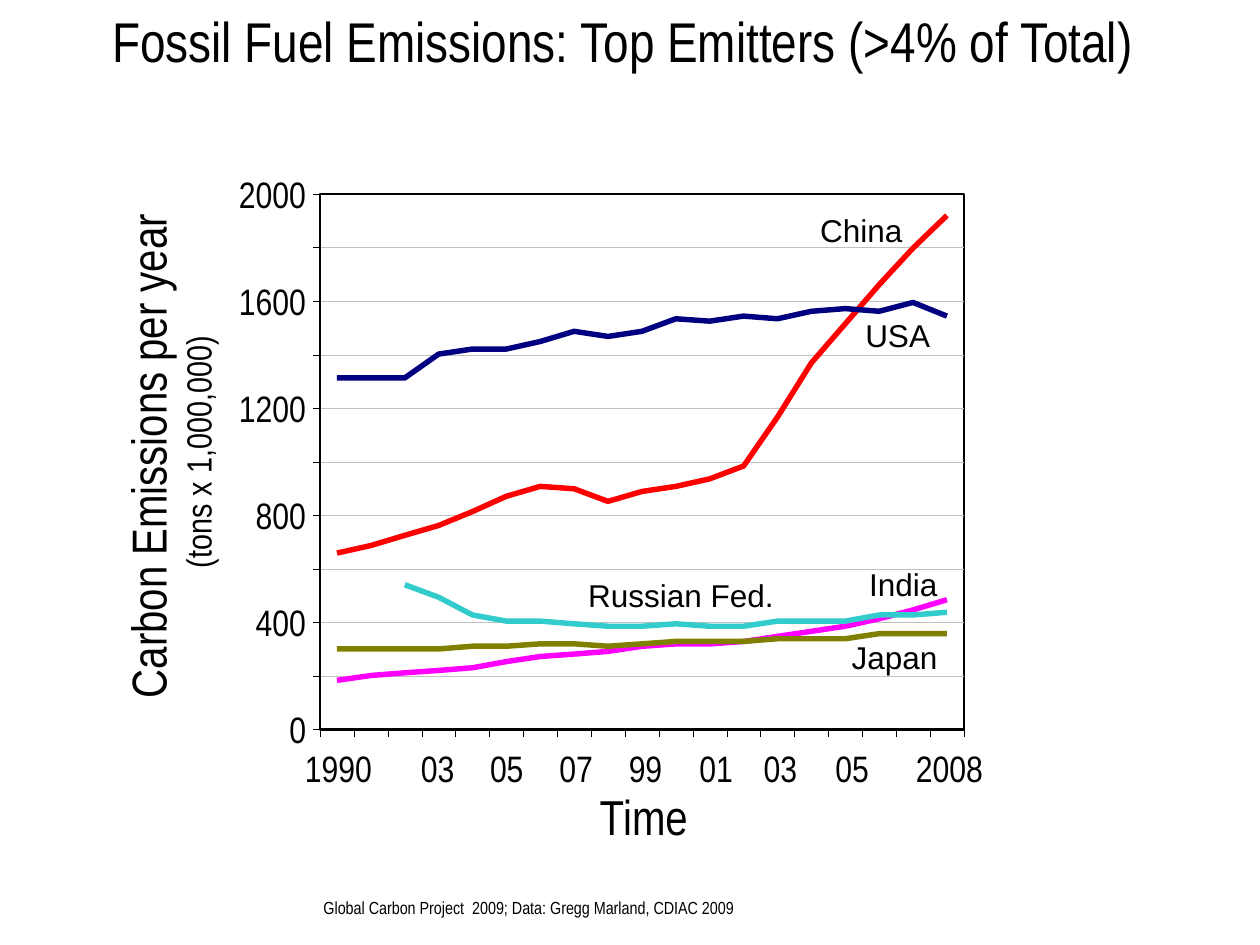
import pptx
import pptx.util
import pptx.dml.color
import pptx.enum.shapes
import pptx.enum.text
import pptx.oxml

Pt = pptx.util.Pt
ALIGN = pptx.enum.text.PP_ALIGN

COLORS = {"text": "000000", "axis": "000000", "grid": "C0C0C0", "China": "FF0000",
          "India": "FF00FF", "Russian Fed.": "33CCCC", "USA": "000080", "Japan": "808000"}

# Plot area in points, and its scales
LEFT, TOP, WIDTH, HEIGHT = 182.9, 110.9, 367.9, 306
RIGHT, BOTTOM = LEFT + WIDTH, TOP + HEIGHT
MAXIMUM, GRID_STEP, LABEL_STEP = 2000, 200, 400
FIRST_YEAR, YEARS = 1990, 19
YEAR_WIDTH = WIDTH / YEARS
TICK = 4.3
HAIRLINE = 0.1

# First year and yearly emissions of each country
EMISSIONS = {
    "China": (1990, [659, 687, 725, 762, 814, 871, 908, 899, 852, 889, 908, 936, 984,
                     1167, 1369, 1515, 1661, 1798, 1920]),
    "India": (1990, [184, 202, 212, 221, 231, 254, 273, 282, 292, 311, 320, 320, 329,
                     348, 367, 386, 414, 447, 485]),
    "Russian Fed.": (1992, [541, 494, 428, 405, 405, 395, 386, 386, 395, 386, 386,
                            405, 405, 405, 428, 428, 438]),
    "USA": (1990, [1313, 1313, 1313, 1402, 1421, 1421, 1449, 1487, 1468, 1487, 1534,
                   1525, 1544, 1534, 1562, 1572, 1562, 1595, 1544]),
    "Japan": (1990, [301, 301, 301, 301, 311, 311, 320, 320, 311, 320, 329, 329, 329,
                     339, 339, 339, 358, 358, 358]),
}
# Left, top, width of each country name
COUNTRY_LABELS = {"China": (461.5, 117, 62), "USA": (487.4, 177.1, 53),
                  "Japan": (479.5, 361, 64.5), "Russian Fed.": (329, 325.4, 123),
                  "India": (489.6, 319.3, 54.5)}
YEAR_LABELS = [("1990", 174.2), ("03", 240.5), ("05", 280), ("07", 319.7), ("99", 359.3),
               ("01", 399.6), ("03", 436.3), ("05", 477.4), ("2008", 523.4)]
DIGIT_WIDTH = 9.6


def rgb(name):
    return pptx.dml.color.RGBColor.from_string(COLORS[name])


def value_y(value):
    return BOTTOM - value / MAXIMUM * HEIGHT


def add_line(slide, start, end, color):
    line = slide.shapes.add_connector(pptx.enum.shapes.MSO_CONNECTOR.STRAIGHT,
                                      *(Pt(length) for length in (*start, *end)))
    line.line.color.rgb = rgb(color)
    line.line.width = Pt(HAIRLINE)
    properties = line._element.spPr
    properties.append(pptx.oxml.parse_xml(
        '<a:effectLst xmlns:a="http://schemas.openxmlformats.org/drawingml/2006/main"/>'))
    return line


def add_text(slide, box, paragraphs, font="Arial Narrow", align=ALIGN.LEFT,
             wrap=False, inset=True, grow=True):
    """Add a text box; paragraphs is a list of (text, size)."""
    shape = slide.shapes.add_textbox(*(Pt(length) for length in box))
    frame = shape.text_frame
    frame.word_wrap = wrap
    sizing = pptx.enum.text.MSO_AUTO_SIZE
    frame.auto_size = sizing.SHAPE_TO_FIT_TEXT if grow else sizing.NONE
    if not inset:
        frame.margin_left = frame.margin_top = frame.margin_right = frame.margin_bottom = 0
    for index, (text, size) in enumerate(paragraphs):
        paragraph = frame.add_paragraph() if index else frame.paragraphs[0]
        paragraph.alignment = align
        run = paragraph.add_run()
        run.text = text
        run.font.size = Pt(size)
        run.font.name = font
        run.font.color.rgb = rgb("text")
    return shape


def add_axis_label(slide, text, left, top):
    add_text(slide, (left, top, DIGIT_WIDTH * len(text), 25.2), [(text, 21)], inset=False)


def add_plot_area(slide):
    frame = slide.shapes.add_shape(pptx.enum.shapes.MSO_SHAPE.RECTANGLE,
                                   Pt(LEFT), Pt(TOP), Pt(WIDTH), Pt(HEIGHT))
    frame.shadow.inherit = False
    frame.fill.background()
    frame.line.color.rgb = rgb("axis")
    frame.line.width = Pt(1.38)

    # Gridlines and value ticks
    for value in range(0, MAXIMUM + 1, GRID_STEP):
        y = value_y(value)
        edge = value in (0, MAXIMUM)
        gridline = add_line(slide, (LEFT, y), (RIGHT, y), "axis" if edge else "grid")
        tick = add_line(slide, (LEFT - TICK, y), (LEFT, y), "axis")
        if value == MAXIMUM / 2:
            gridline.begin_connect(frame, 1)
            gridline.end_connect(frame, 3)
            tick.end_connect(frame, 1)

    # Value axis and year ticks
    add_line(slide, (LEFT, TOP), (LEFT, BOTTOM), "axis")
    for index in range(YEARS + 1):
        x = LEFT + index * YEAR_WIDTH
        add_line(slide, (x, BOTTOM + TICK), (x, BOTTOM), "axis")


def add_curve(slide, country, first_year, values):
    points = [(Pt(LEFT + (first_year - FIRST_YEAR + index + 0.5) * YEAR_WIDTH),
               Pt(value_y(value))) for index, value in enumerate(values)]
    builder = slide.shapes.build_freeform(*points[0])
    builder.add_line_segments(points[1:], close=False)
    curve = builder.convert_to_shape()
    curve.shadow.inherit = False
    curve.fill.background()
    curve.line.color.rgb = rgb(country)
    curve.line.width = Pt(3.13)


def main():
    presentation = pptx.Presentation()
    presentation.slide_width, presentation.slide_height = Pt(720), Pt(540)
    slide = presentation.slides.add_slide(presentation.slide_layouts[6])

    # Plot
    add_plot_area(slide)
    for country, (first_year, values) in EMISSIONS.items():
        add_curve(slide, country, first_year, values)

    # Axis labels and titles
    for text, left in YEAR_LABELS:
        add_axis_label(slide, text, left, 426)
    for value in range(0, MAXIMUM + 1, LABEL_STEP):
        text = str(value)
        add_axis_label(slide, text, 174.9 - DIGIT_WIDTH * len(text), value_y(value) - 13)
    add_text(slide, (335.5, 445.7, 65.5, 41), [("Time", 28)])
    value_title = add_text(slide, (-49.7, 228.2, 291.6, 64.8),
                           [("Carbon Emissions per year", 28), (" (tons x 1,000,000)", 20)],
                           align=ALIGN.CENTER)
    value_title.rotation = 270

    # Country names
    for country, (left, top, width) in COUNTRY_LABELS.items():
        add_text(slide, (left, top, width, 28.8), [(country, 18)], font="Arial")

    # Title and source
    title = add_text(slide, (29.5, 2.9, 653, 39.6),
                     [("Fossil Fuel Emissions: Top Emitters (>4% of Total)", 32)],
                     align=ALIGN.CENTER, wrap=True, grow=False)
    title.text_frame.vertical_anchor = pptx.enum.text.MSO_ANCHOR.MIDDLE
    add_text(slide, (177.8, 509, 273.6, 19.4),
             [("Global Carbon Project  2009; Data: Gregg Marland, CDIAC 2009", 10)], wrap=True)

    presentation.save("out.pptx")


if __name__ == "__main__":
    main()
